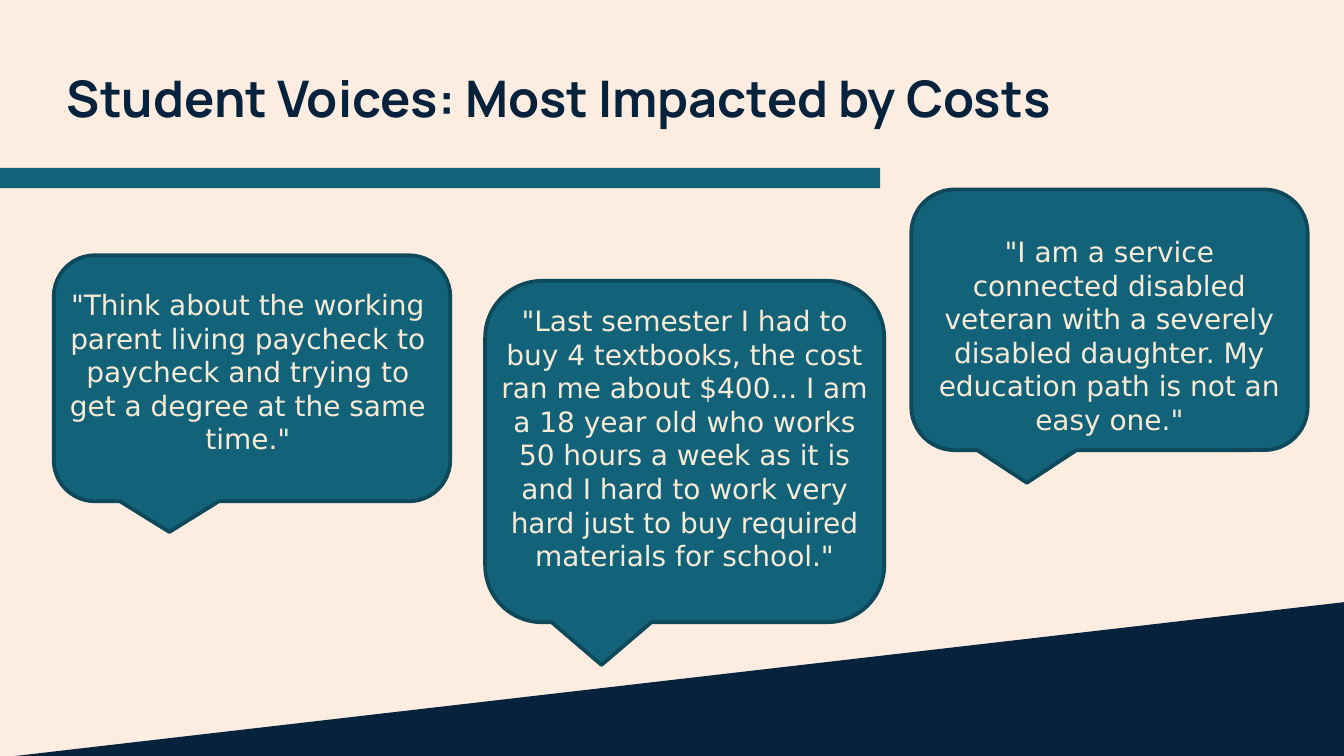
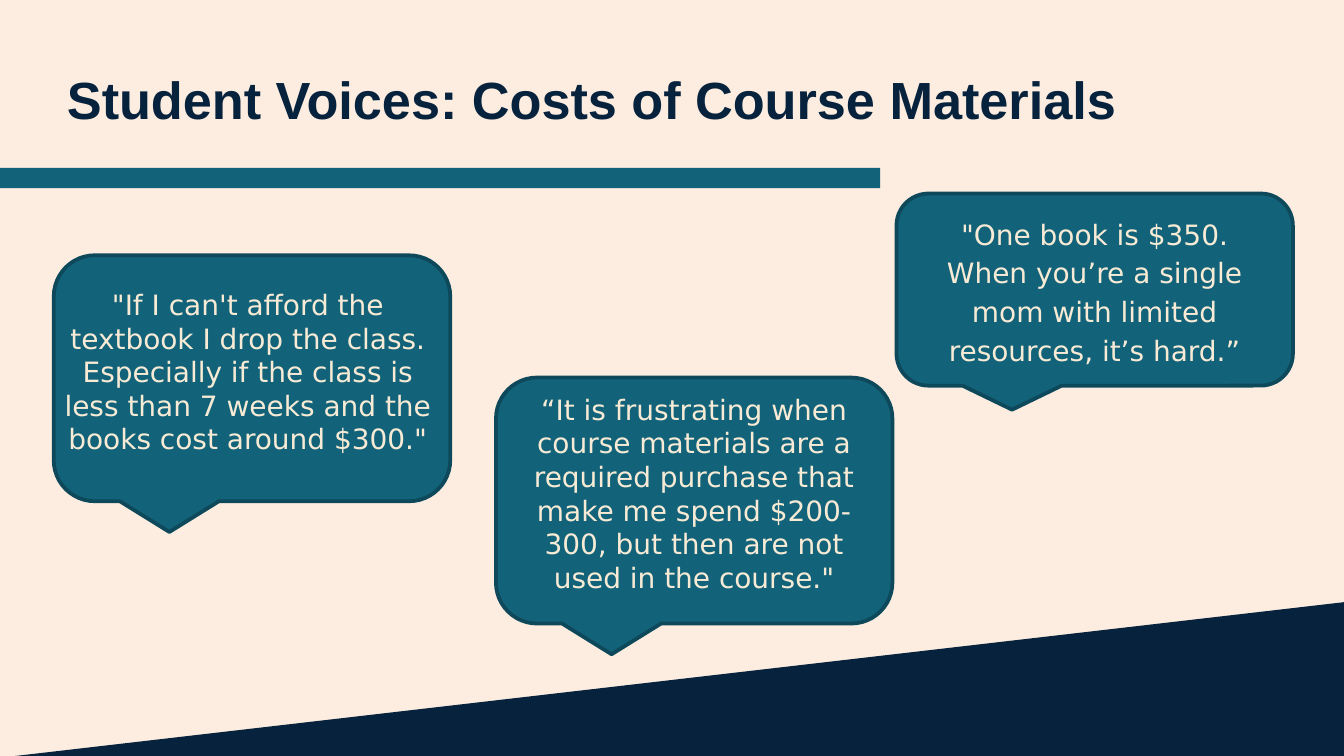
from dataclasses import dataclass

from pptx import Presentation
from pptx.dml.color import RGBColor
from pptx.enum.shapes import MSO_SHAPE
from pptx.enum.text import MSO_ANCHOR, MSO_AUTO_SIZE, PP_ALIGN
from pptx.util import Inches, Pt

CALLOUT = MSO_SHAPE.ROUNDED_RECTANGULAR_CALLOUT
RECTANGLE = MSO_SHAPE.RECTANGLE
TRIANGLE = MSO_SHAPE.RIGHT_TRIANGLE
CENTER = PP_ALIGN.CENTER
MIDDLE = MSO_ANCHOR.MIDDLE
GROW = MSO_AUTO_SIZE.SHAPE_TO_FIT_TEXT


@dataclass(frozen=True)
class Theme:
    cream: RGBColor = RGBColor.from_string("FCEDE0")
    navy: RGBColor = RGBColor.from_string("06223D")
    teal: RGBColor = RGBColor.from_string("126279")
    outline: RGBColor = RGBColor.from_string("0D495A")
    quote_color: RGBColor = RGBColor.from_string("F7EBD6")
    quote_font: str = "DejaVu Sans"
    quote_size: int = 15
    outline_width: int = 2


THEME = Theme()

# Each quote: bubble box, text box (None puts the text in the bubble), text, options.
SLIDES = [
    {
        "title": "Student Voices: Most Impacted by Costs",
        "font": "Manrope", "size": 27,
        "quotes": [
            ((0.4, 1.9, 2.95, 1.83), (0.37, 2.09, 2.95, 1.63),
             '"Think about the working parent living paycheck to paycheck and '
             'trying to get a degree at the same time."', {}),
            ((3.61, 2.09, 2.97, 2.54), (3.61, 2.21, 2.97, 2.64),
             '"Last semester I had to buy 4 textbooks, the cost ran me about '
             '$400... I am a 18 year old who works 50 hours a week as it is and '
             'I hard to work very hard just to buy required materials for '
             'school."', {}),
            ((6.78, 1.41, 2.95, 1.94), None,
             '"I am a service connected disabled veteran with a severely '
             'disabled daughter. My education path is not an easy one."',
             {"top_inset": 0.28}),
        ],
    },
    {
        "title": "Student Voices: Costs of Course Materials",
        "font": "Arial", "size": 28,
        "quotes": [
            ((0.4, 1.9, 2.95, 1.83), (0.37, 2.09, 2.95, 1.36),
             '"If I can\'t afford the textbook I drop the class. Especially if '
             'the class is less than 7 weeks and the books cost around $300."', {}),
            ((3.69, 2.81, 2.95, 1.83), (3.69, 2.87, 2.95, 1.62),
             '“It is frustrating when course materials are a required purchase '
             'that make me spend $200-300, but then are not used in the '
             'course."', {}),
            ((6.67, 1.44, 2.95, 1.43), None,
             '"One book is $350. When you’re a single mom with limited '
             'resources, it’s hard.”', {"line_spacing": 1.15}),
        ],
    },
]


def add_filled(page, kind, box, color):
    shape = page.shapes.add_shape(kind, *map(Inches, box))
    shape.shadow.inherit = False
    shape.fill.solid()
    shape.fill.fore_color.rgb = color
    shape.line.fill.background()
    return shape


def add_text_box(page, box):
    frame = page.shapes.add_textbox(*map(Inches, box)).text_frame
    frame.word_wrap = True
    return frame


def write(frame, text, font, size, color):
    para = frame.paragraphs[0]
    para.text = text
    para.font.name = font
    para.font.size = Pt(size)
    para.font.color.rgb = color
    return para


def add_backdrop(page):
    wedge = add_filled(page, TRIANGLE, (-0.36, 4.47, 10.45, 1.21), THEME.navy)
    wedge._element.spPr.get_or_add_xfrm().set("flipH", "1")
    add_filled(page, RECTANGLE, (-0.02, 1.25, 6.57, 0.15), THEME.teal)


def add_title(page, content):
    frame = add_text_box(page, (0.4, 0.4, 8.41, 0.59))
    frame.margin_top = frame.margin_bottom = Inches(0.1)
    para = write(frame, content["title"], content["font"], content["size"], THEME.navy)
    para.font.bold = True


def add_bubble(page, box):
    bubble = add_filled(page, CALLOUT, box, THEME.teal)
    bubble.line.color.rgb = THEME.outline
    bubble.line.width = Pt(THEME.outline_width)
    return bubble


def add_quote(page, bubble_box, text_box, text, top_inset=0.05, line_spacing=None):
    bubble = add_bubble(page, bubble_box)
    if text_box:
        frame = add_text_box(page, text_box)
        frame.auto_size = GROW
    else:
        frame = bubble.text_frame
        frame.word_wrap = True
        frame.vertical_anchor = MIDDLE
    frame.margin_top = Inches(top_inset)
    para = write(frame, text, THEME.quote_font, THEME.quote_size, THEME.quote_color)
    para.alignment = CENTER
    para.line_spacing = line_spacing


def main():
    deck = Presentation()
    deck.slide_width = Inches(10)
    deck.slide_height = deck.slide_width * 9 // 16
    background = deck.slide_master.background.fill
    background.solid()
    background.fore_color.rgb = THEME.cream
    for content in SLIDES:
        page = deck.slides.add_slide(deck.slide_layouts[6])
        add_backdrop(page)
        add_title(page, content)
        for bubble_box, text_box, text, options in content["quotes"]:
            add_quote(page, bubble_box, text_box, text, **options)
    deck.save("out.pptx")


if __name__ == "__main__":
    main()
